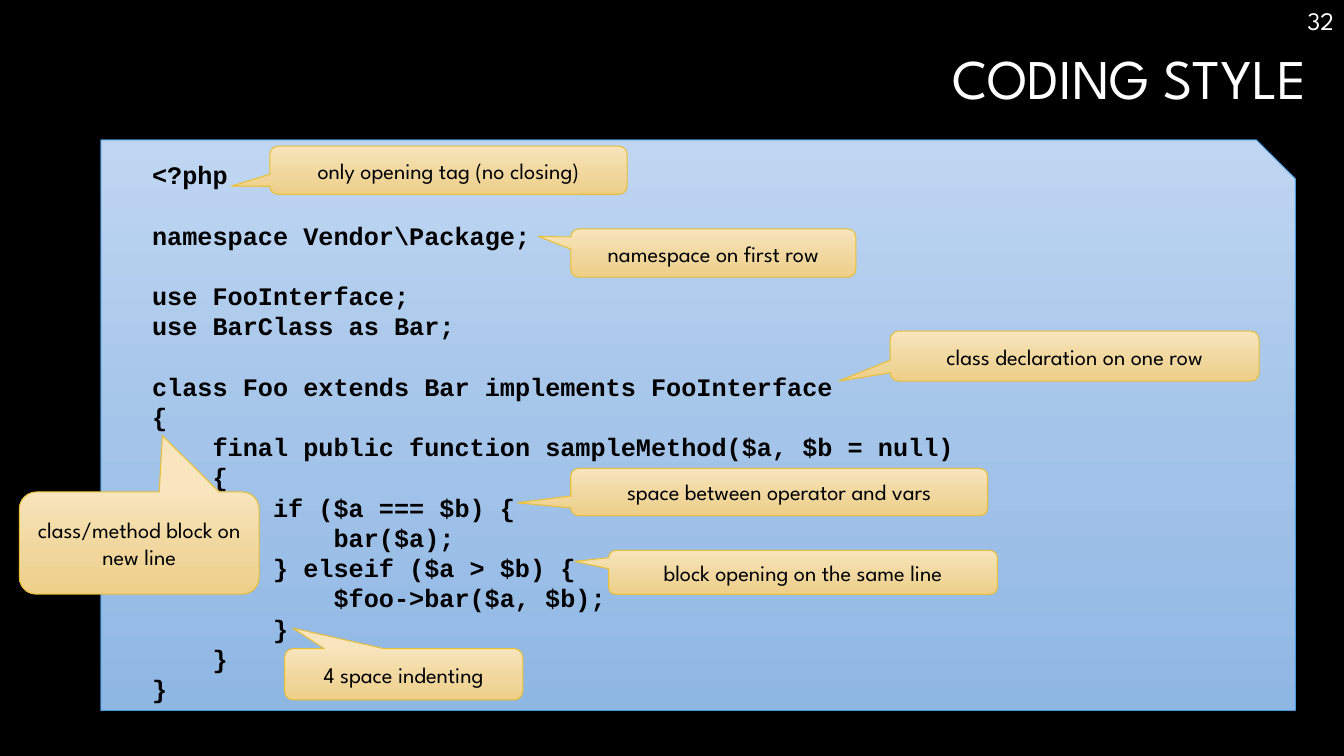
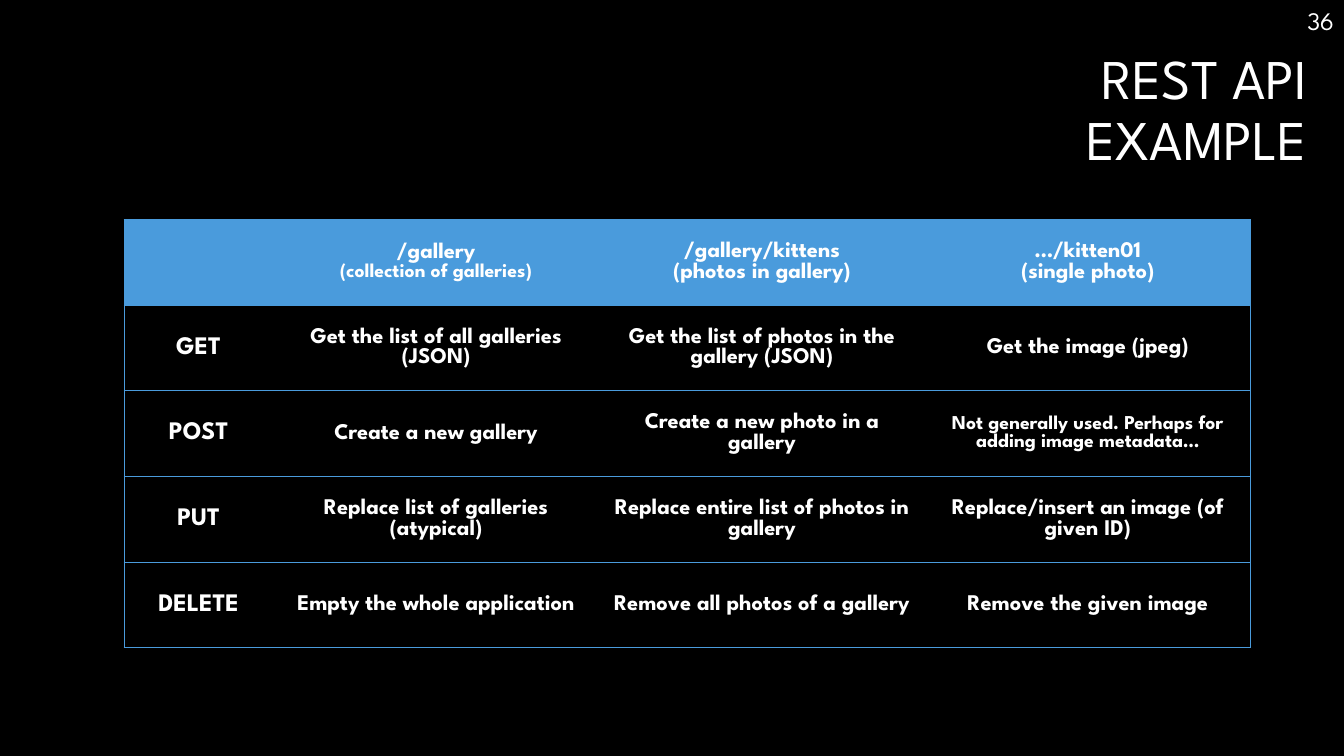
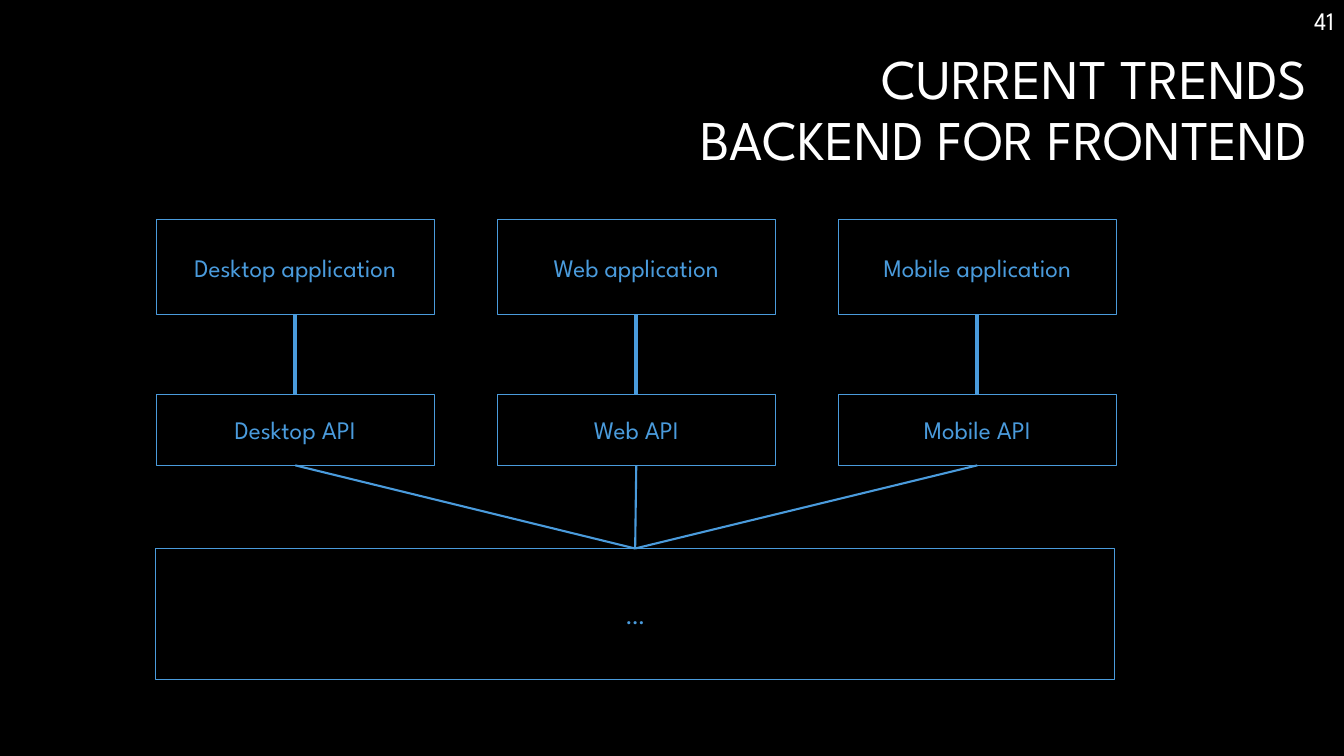
from copy import deepcopy

from lxml import etree
from pptx import Presentation
from pptx.dml.color import RGBColor
from pptx.enum import shapes, text
from pptx.oxml import ns
from pptx.util import Pt

BLACK = RGBColor(0x00, 0x00, 0x00)
WHITE = RGBColor(0xFF, 0xFF, 0xFF)
BLUE = RGBColor(0x4A, 0x9B, 0xDC)
GOLD = RGBColor(0xE9, 0xBF, 0x35)
BLUE_GRADIENT = [RGBColor(0xBF, 0xD6, 0xF2), RGBColor(0xA4, 0xC4, 0xE9), RGBColor(0x8F, 0xB7, 0xE4)]
GOLD_GRADIENT = [RGBColor(0xF8, 0xE5, 0xBD), RGBColor(0xF1, 0xD8, 0xA0), RGBColor(0xEE, 0xCF, 0x89)]
GRADIENT_POSITIONS = [0, 0.52, 1]
BODY_FONT = "League Spartan"
CODE_FONT = "Courier New"
THIN = 0.75

# Presentation and shared background
presentation = Presentation()
presentation.slide_width = Pt(960)
presentation.slide_height = Pt(540)
background = presentation.slide_master.background.fill
background.solid()
background.fore_color.rgb = BLACK


def add_text(paragraph, words, size, color, bold=False, font=BODY_FONT):
    run = paragraph.add_run()
    run.text = words
    run.font.name = font
    run.font.size = Pt(size)
    run.font.bold = bold
    run.font.color.rgb = color


def add_shape(slide, kind, box, line_color, gradient=None):
    shape = slide.shapes.add_shape(kind, *[Pt(length) for length in box])
    shape.shadow.inherit = False
    shape.line.color.rgb = line_color
    shape.line.width = Pt(THIN)
    if gradient is None:
        shape.fill.background()
    else:
        shape.fill.gradient()
        shape.fill.gradient_angle = 270
        stop_list = shape.element.spPr.find(".//" + ns.qn("a:gsLst"))
        stop_list.insert(1, deepcopy(stop_list[0]))
        for stop, color, position in zip(shape.fill.gradient_stops, gradient, GRADIENT_POSITIONS):
            stop.color.rgb = color
            stop.position = position
    frame = shape.text_frame
    frame.word_wrap = True
    frame.vertical_anchor = text.MSO_ANCHOR.MIDDLE
    frame.paragraphs[0].alignment = text.PP_ALIGN.CENTER
    return shape


# Titles and page numbers
pages = [
    (["CODING STYLE"], "32"),
    (["REST API", "EXAMPLE"], "36"),
    (["CURRENT TRENDS", "BACKEND FOR FRONTEND"], "41"),
]
slides = []
for title_lines, number in pages:
    slide = presentation.slides.add_slide(presentation.slide_layouts[5])
    slides.append(slide)
    title = slide.shapes.title
    title.left, title.top, title.width, title.height = Pt(18.7), Pt(33.1), Pt(922.3), Pt(101.5)
    title.text_frame.auto_size = text.MSO_AUTO_SIZE.NONE
    title.text_frame.vertical_anchor = text.MSO_ANCHOR.TOP
    paragraph = title.text_frame.paragraphs[0]
    paragraph.alignment = text.PP_ALIGN.RIGHT
    paragraph.line_spacing = 0.9
    for index, words in enumerate(title_lines):
        if index:
            paragraph.add_line_break()
        add_text(paragraph, words, 40, WHITE)
    number_box = slide.shapes.add_textbox(Pt(752.4), Pt(0), Pt(207.6), Pt(29))
    number_box.text_frame.word_wrap = True
    paragraph = number_box.text_frame.paragraphs[0]
    paragraph.alignment = text.PP_ALIGN.RIGHT
    add_text(paragraph, number, 18, WHITE)

coding_slide, rest_slide, trends_slide = slides

# Code panel: indent level, blank line above, words
LINE_HEIGHT = 21.6
INDENT_STEP = 43.2
code_lines = [
    (0, False, "<?php"),
    (0, True, "namespace Vendor\\Package;"),
    (0, True, "use FooInterface;"),
    (0, False, "use BarClass as Bar;"),
    (0, True, "class Foo extends Bar implements FooInterface"),
    (0, False, "{"),
    (1, False, "final public function sampleMethod($a, $b = null)"),
    (1, False, "{"),
    (2, False, "if ($a === $b) {"),
    (3, False, "bar($a);"),
    (2, False, "} elseif ($a > $b) {"),
    (3, False, "$foo->bar($a, $b);"),
    (2, False, "}"),
    (1, False, "}"),
    (0, False, "}"),
]
code_panel = add_shape(coding_slide, shapes.MSO_SHAPE.SNIP_1_RECTANGLE,
                       (72, 100, 853.2, 407.4), BLUE, BLUE_GRADIENT)
code_panel.adjustments[0] = 0.068
frame = code_panel.text_frame
frame.vertical_anchor = text.MSO_ANCHOR.TOP
frame.margin_left = Pt(28)
frame.margin_top = Pt(0)
for index, (level, blank_above, words) in enumerate(code_lines):
    paragraph = frame.add_paragraph() if index else frame.paragraphs[0]
    paragraph.alignment = text.PP_ALIGN.LEFT
    paragraph.line_spacing = Pt(LINE_HEIGHT)
    paragraph.space_before = Pt(LINE_HEIGHT if blank_above else 0)
    properties = paragraph._p.get_or_add_pPr()
    properties.set("marL", str(Pt(8.64 + level * INDENT_STEP)))
    properties.set("indent", "0")
    add_text(paragraph, words, 18, BLACK, True, CODE_FONT)

# Callouts: box, pointer tip, words
callouts = [
    ((203.3, 463.3, 170.1, 36.6), (-0.466, -0.902), "4 space indenting"),
    ((407.7, 334.6, 297.8, 33.8), (-0.628, 0.226), "space between operator and vars"),
    ((635.9, 236.5, 263.5, 35.7), (-0.639, 0.5), "class declaration on one row"),
    ((407.7, 163.6, 203.6, 34.4), (-0.614, -0.345), "namespace on first row"),
    ((192.8, 104.4, 255.1, 34.4), (-0.608, 0.332), "only opening tag (no closing)"),
    ((434.7, 393.1, 277.8, 31.5), (-0.587, -0.248), "block opening on the same line"),
    ((13.8, 351.4, 171.3, 73), (0.097, -1.052), "class/method block on new line"),
]
for box, tip, words in callouts:
    callout = add_shape(coding_slide, shapes.MSO_SHAPE.ROUNDED_RECTANGULAR_CALLOUT,
                        box, GOLD, GOLD_GRADIENT)
    callout.adjustments[0], callout.adjustments[1] = tip
    add_text(callout.text_frame.paragraphs[0], words, 16, BLACK)

# REST table: each cell is a list of (words, size) paragraphs
rows = [
    [[], [("/gallery", 16), ("(collection of galleries)", 14)],
     [("/gallery/kittens", 16), ("(photos in gallery)", 16)],
     [("…/kitten01", 16), ("(single photo)", 16)]],
    [[("GET", 18)], [("Get the list of all galleries (JSON)", 16)],
     [("Get the list of photos in the gallery (JSON)", 16)], [("Get the image (jpeg)", 16)]],
    [[("POST", 18)], [("Create a new gallery", 16)], [("Create a new photo in a gallery", 16)],
     [("Not generally used. Perhaps for adding image metadata…", 14)]],
    [[("PUT", 18)], [("Replace list of galleries (atypical)", 16)],
     [("Replace entire list of photos in gallery", 16)],
     [("Replace/insert an image (of given ID)", 16)]],
    [[("DELETE", 18)], [("Empty the whole application", 16)],
     [("Remove all photos of a gallery", 16)], [("Remove the given image", 16)]],
]
column_widths = [106.4, 232.8, 232.8, 232.8]
ROW_HEIGHT = 61.2
table = rest_slide.shapes.add_table(
    len(rows), len(column_widths), Pt(88.7), Pt(156.8),
    Pt(sum(column_widths)), Pt(ROW_HEIGHT * len(rows))).table
table.first_row = False
table.horz_banding = False
for column, width in zip(table.columns, column_widths):
    column.width = Pt(width)
for row_index, row in enumerate(rows):
    table.rows[row_index].height = Pt(ROW_HEIGHT)
    for column_index, content in enumerate(row):
        cell = table.cell(row_index, column_index)
        cell.vertical_anchor = text.MSO_ANCHOR.MIDDLE
        # Horizontal rules everywhere, vertical ones only on the outside
        sides = {"lnL": column_index == 0, "lnR": column_index == len(row) - 1,
                 "lnT": True, "lnB": True}
        for side, visible in sides.items():
            border = etree.SubElement(cell._tc.get_or_add_tcPr(), ns.qn("a:" + side), w=str(Pt(THIN)))
            if visible:
                border_fill = etree.SubElement(border, ns.qn("a:solidFill"))
                etree.SubElement(border_fill, ns.qn("a:srgbClr"), val=str(BLUE))
            else:
                etree.SubElement(border, ns.qn("a:noFill"))
        if row_index == 0:
            cell.fill.solid()
            cell.fill.fore_color.rgb = BLUE
        else:
            cell.fill.background()
        for index, (words, size) in enumerate(content):
            paragraph = cell.text_frame.add_paragraph() if index else cell.text_frame.paragraphs[0]
            paragraph.alignment = text.PP_ALIGN.CENTER
            add_text(paragraph, words, size, WHITE, True)

# Backend for frontend: applications above their APIs, shared backend below
COLUMN_LEFT, COLUMN_STEP, BOX_WIDTH = 111.6, 243.6, 198.6
links = []
backend = add_shape(trends_slide, shapes.MSO_SHAPE.RECTANGLE, (110.9, 391.8, 685.6, 93.6), BLUE)
add_text(backend.text_frame.paragraphs[0], "…", 18, BLUE)
for index, client in enumerate(["Desktop", "Web", "Mobile"]):
    left = COLUMN_LEFT + index * COLUMN_STEP
    application, api = [
        add_shape(trends_slide, shapes.MSO_SHAPE.RECTANGLE, (left, top, BOX_WIDTH, height), BLUE)
        for top, height in [(156.8, 67.8), (281.7, 50.7)]]
    add_text(application.text_frame.paragraphs[0], client + " application", 18, BLUE)
    add_text(api.text_frame.paragraphs[0], client + " API", 18, BLUE)
    links += [(application, api, 3), (api, backend, 1.5)]

# Connectors from bottom middle to top middle
for upper, lower, width in links:
    connector = trends_slide.shapes.add_connector(
        shapes.MSO_CONNECTOR.STRAIGHT, Pt(0), Pt(0), Pt(0), Pt(0))
    connector.begin_connect(upper, 2)
    connector.end_connect(lower, 0)
    connector.line.color.rgb = BLUE
    connector.line.width = Pt(width)
    etree.SubElement(connector.element.spPr, ns.qn("a:effectLst"))

presentation.save("out.pptx")
